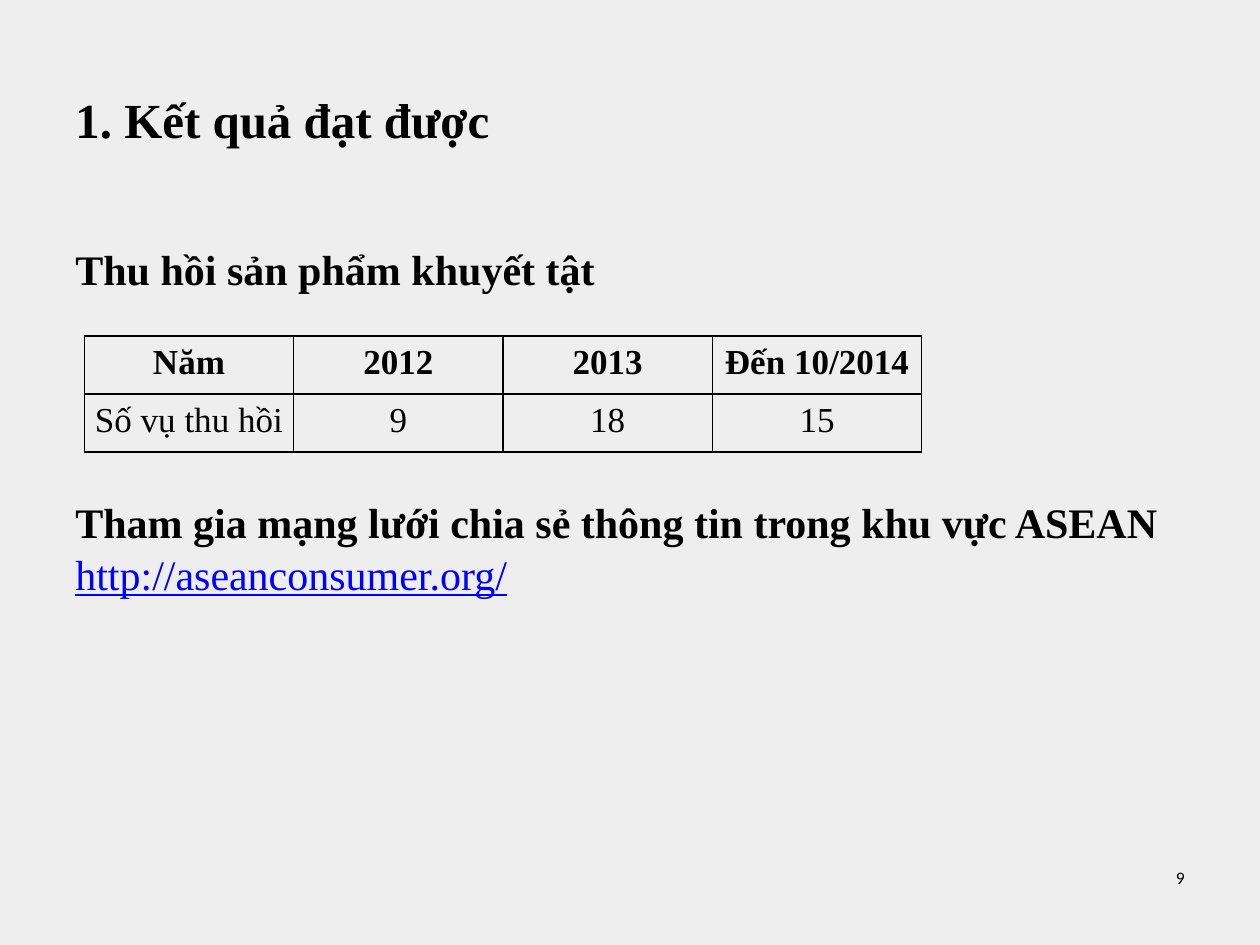
from dataclasses import dataclass

from lxml.etree import SubElement
from pptx import Presentation
from pptx.dml.color import RGBColor
from pptx.enum.text import MSO_ANCHOR, PP_ALIGN
from pptx.oxml.ns import qn
from pptx.util import Cm, Pt


@dataclass(frozen=True)
class Theme:
    """Colours, fonts and type sizes of the slide."""
    background: str = "EEEEEE"
    ink: str = "000000"
    link: str = "0000FF"
    serif: str = "Times New Roman"
    sans: str = "Calibri"
    title: int = 28
    body: int = 24
    cell: int = 20
    number: int = 10


THEME = Theme()


def style(p, size, bold=False, color=THEME.ink, name=THEME.serif, underline=None):
    """Format every run of a paragraph."""
    for r in p.runs:
        font = r.font
        font.name, font.size = name, Pt(size)
        font.bold, font.underline = bold, underline
        font.color.rgb = RGBColor.from_string(color)


def add_text(s, box, lines, top_inset=0.13):
    """Add a wrapping text box with one paragraph per line."""
    tf = s.shapes.add_textbox(*map(Cm, box)).text_frame
    tf.word_wrap = True
    tf.margin_top = Cm(top_inset)
    tf.text = "\n".join(lines)
    return tf


def add_title(s, text):
    """Add the slide title."""
    tf = add_text(s, (1.27, 0.99, 22.86, 2.59), [text], top_inset=0.33)
    tf.vertical_anchor = MSO_ANCHOR.MIDDLE
    style(tf.paragraphs[0], THEME.title, bold=True)


def add_body(s, recall, network, address):
    """Add the headings around the table and the web address below them."""
    tf = add_text(s, (1.27, 4.65, 22.43, 12.27), [recall, network, address], top_inset=0.25)
    first, second, third = tf.paragraphs
    second.space_before = Pt(116)
    third.space_before = Pt(1)
    style(first, THEME.body, bold=True)
    style(second, THEME.body, bold=True)
    style(third, THEME.body, color=THEME.link, underline=True)


def add_borders(cell, width=1):
    """Draw a solid line on all four sides of a cell."""
    tc_pr = cell._tc.get_or_add_tcPr()
    for side in ("a:lnL", "a:lnR", "a:lnT", "a:lnB"):
        ln = SubElement(tc_pr, qn(side), w=str(Pt(width)))
        fill = SubElement(ln, qn("a:solidFill"))
        SubElement(fill, qn("a:srgbClr"), val=THEME.ink)


def fill_cell(cell, text, bold):
    """Write centred text in a bordered, unfilled cell."""
    add_borders(cell)
    cell.fill.background()
    cell.vertical_anchor = MSO_ANCHOR.MIDDLE
    cell.margin_left = cell.margin_right = Cm(0.18)
    cell.margin_top = cell.margin_bottom = 0
    cell.text = text
    p = cell.text_frame.paragraphs[0]
    p.alignment = PP_ALIGN.CENTER
    p.line_spacing = Pt(20)
    style(p, THEME.cell, bold)


def add_grid(s, rows, left, top, col_width, row_height):
    """Add a table with equal columns and rows and a bold header."""
    n_rows, n_cols = len(rows), len(rows[0])
    table = s.shapes.add_table(n_rows, n_cols, Cm(left), Cm(top),
                               Cm(col_width * n_cols), Cm(row_height * n_rows)).table
    table.horz_banding = False
    for i, row in enumerate(rows):
        for j, text in enumerate(row):
            fill_cell(table.cell(i, j), text, bold=i == 0)


def add_number(s, text):
    """Add the slide number at the lower right."""
    p = add_text(s, (18.21, 17.35, 5.92, 1.32), [text]).paragraphs[0]
    p.alignment = PP_ALIGN.RIGHT
    style(p, THEME.number, name=THEME.sans)


def main():
    """Build the slide and save it."""
    prs = Presentation()
    prs.slide_width, prs.slide_height = Cm(25.4), Cm(19.05)
    s = prs.slides.add_slide(prs.slide_layouts[6])
    s.background.fill.solid()
    s.background.fill.fore_color.rgb = RGBColor.from_string(THEME.background)
    add_body(s, "Thu hồi sản phẩm khuyết tật",
             "Tham gia mạng lưới chia sẻ thông tin trong khu vực ASEAN",
             "http://aseanconsumer.org/")
    add_title(s, "1. Kết quả đạt được")
    add_grid(s, [("Năm", "2012", "2013", "Đến 10/2014"),
                 ("Số vụ thu hồi", "9", "18", "15")],
             left=1.7, top=6.77, col_width=4.22, row_height=1.17)
    add_number(s, "9")
    prs.save("out.pptx")


if __name__ == "__main__":
    main()
